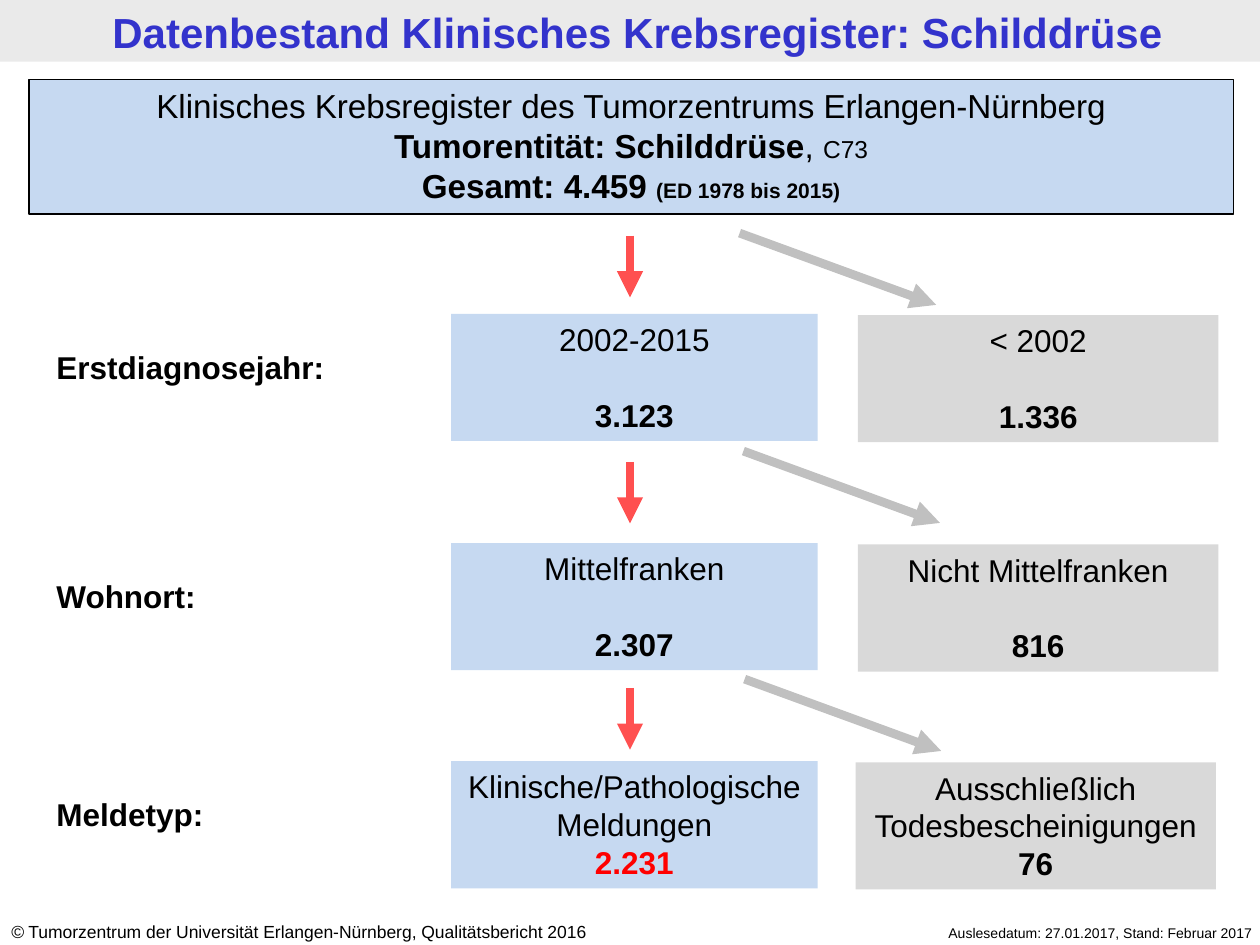
"""Builds the data flow slide of the thyroid cancer register."""
from lxml import etree
from pptx import Presentation, util as u
from pptx.dml.color import RGBColor
from pptx.enum import shapes, text
from pptx.oxml.ns import qn

BLUE = RGBColor(0xC6, 0xD9, 0xF1)
GRAY = RGBColor(0xD9, 0xD9, 0xD9)
BAND = RGBColor(0xEA, 0xEA, 0xEA)
INK = RGBColor(0, 0, 0)
RED = RGBColor(0xFF, 0, 0)
NAVY = RGBColor(0x33, 0x33, 0xCC)
CORAL = RGBColor(0xFF, 0x50, 0x50)
SILVER = RGBColor(0xC0, 0xC0, 0xC0)

LEFT, MID, RIGHT = text.PP_ALIGN.LEFT, text.PP_ALIGN.CENTER, text.PP_ALIGN.RIGHT
COLS, ROWS = 100, 75
PLAIN, BOLD = {"size": 18}, {"size": 18, "bold": True}

TITLE = "Datenbestand Klinisches Krebsregister: Schilddrüse"
HEAD = [
    [("Klinisches Krebsregister des Tumorzentrums Erlangen-Nürnberg", {"size": 19})],
    [("Tumorentität: Schilddrüse", {"size": 19, "bold": True}),
     (", ", {"size": 19}), ("C73", {"size": 14})],
    [("Gesamt: 4.459 ", {"size": 19, "bold": True}),
     ("(ED 1978 bis 2015)", {"size": 12, "bold": True})],
]
# label, top row, gap before number, kept (name, number, colour), dropped (name, number, column)
STEPS = [
    ("Erstdiagnosejahr:", 24.9, 21.6, ("2002-2015", "3.123", INK), ("< 2002", "1.336", 68.1)),
    ("Wohnort:", 43.1, 21.6, ("Mittelfranken", "2.307", INK), ("Nicht Mittelfranken", "816", 68.1)),
    ("Meldetyp:", 60.4, 0, ("Klinische/Pathologische Meldungen", "2.231", RED),
     ("Ausschließlich Todesbescheinigungen", "76", 67.9)),
]
SLANTS = [(58.7, 18.5), (59, 35.8), (59.1, 53.9)]
FEET = [
    ((-0.1, 72.6, 52.4, 2.7), LEFT, [("©", {"size": 10, "italic": True}), (
        " Tumorzentrum der Universität Erlangen-Nürnberg, Qualitätsbericht 2016", {"size": 10})]),
    ((66.5, 72.9, 33.9, 2.4), RIGHT,
     [("Auslesedatum: 27.01.2017, Stand: Februar 2017", {"size": 8})]),
]

deck = Presentation()
deck.slide_width, deck.slide_height = u.Inches(10), u.Inches(7.5)
slide = deck.slides.add_slide(deck.slide_layouts[5])


def grid(*spots):
    units = deck.slide_width / COLS, deck.slide_height / ROWS
    return [round(n * units[i % 2]) for i, n in enumerate(spots)]


def write(shape, lines, align=MID, gap=0):
    frame = shape.text_frame
    form = {"word_wrap": True, "auto_size": text.MSO_AUTO_SIZE.NONE,
            "vertical_anchor": text.MSO_ANCHOR.TOP}
    for key, val in form.items():
        setattr(frame, key, val)
    for i, runs in enumerate(lines):
        para = frame.add_paragraph() if i else frame.paragraphs[0]
        para.alignment = align
        para.space_before = u.Pt(gap if i else 0)
        for words, look in runs:
            run = para.add_run()
            run.text = words
            look = {"name": "Arial", "bold": False, "color": INK, **look}
            run.font.color.rgb = look.pop("color")
            look["size"] = u.Pt(look["size"])
            for key, val in look.items():
                setattr(run.font, key, val)


def block(spot, fill, edge=None):
    shape = slide.shapes.add_shape(shapes.MSO_SHAPE.RECTANGLE, *grid(*spot))
    shape.shadow.inherit = False
    shape.fill.solid()
    shape.fill.fore_color.rgb = fill
    if edge is None:
        shape.line.fill.background()
    else:
        shape.line.color.rgb = edge
        shape.line.width = u.Pt(0.75)
    return shape


def label(spot, runs, align=LEFT):
    write(slide.shapes.add_textbox(*grid(*spot)), [runs], align)


def arrow(x, y, dx, dy, color):
    line = slide.shapes.add_connector(
        shapes.MSO_CONNECTOR.STRAIGHT, *grid(x, y, x + dx, y + dy))
    line.line.color.rgb = color
    line.line.width = u.Pt(5)
    etree.SubElement(line.line._get_or_add_ln(), qn("a:tailEnd"), type="triangle")
    etree.SubElement(line._element.spPr, qn("a:effectLst"))


band = block((0, 0, 100, 4.9), BAND)
title = slide.shapes.title
title._element.addprevious(band._element)
for key, val in zip(("left", "top", "width", "height"), grid(0.6, 0.1, 100, 4.9)):
    setattr(title, key, val)
for side in ("top", "bottom"):
    setattr(title.text_frame, "margin_" + side, u.Inches(0.04))
write(title, [[(TITLE, {"size": 24, "bold": True, "color": NAVY})]])

write(block((2.3, 6.3, 95.6, 10.7), BLUE, INK), HEAD)
for i, (name, top, gap, kept, lost) in enumerate(STEPS):
    label((3.5, top + 2.2, 27.6, 4), [(name, BOLD)])
    write(block((35.8, top, 29.1, 10.1), BLUE),
          [[(kept[0], PLAIN)], [(kept[1], {**BOLD, "color": kept[2]})]], gap=gap)
    write(block((lost[2], top + 0.1, 28.6, 10.1), GRAY),
          [[(lost[0], PLAIN)], [(lost[1], BOLD)]], gap=gap)
    arrow(50, 18.7 + 17.95 * i, 0, 4.9, CORAL)
    arrow(*SLANTS[i], 15.6, 5.7, SILVER)
for spot, align, runs in FEET:
    label(spot, runs, align)

deck.save("out.pptx")
